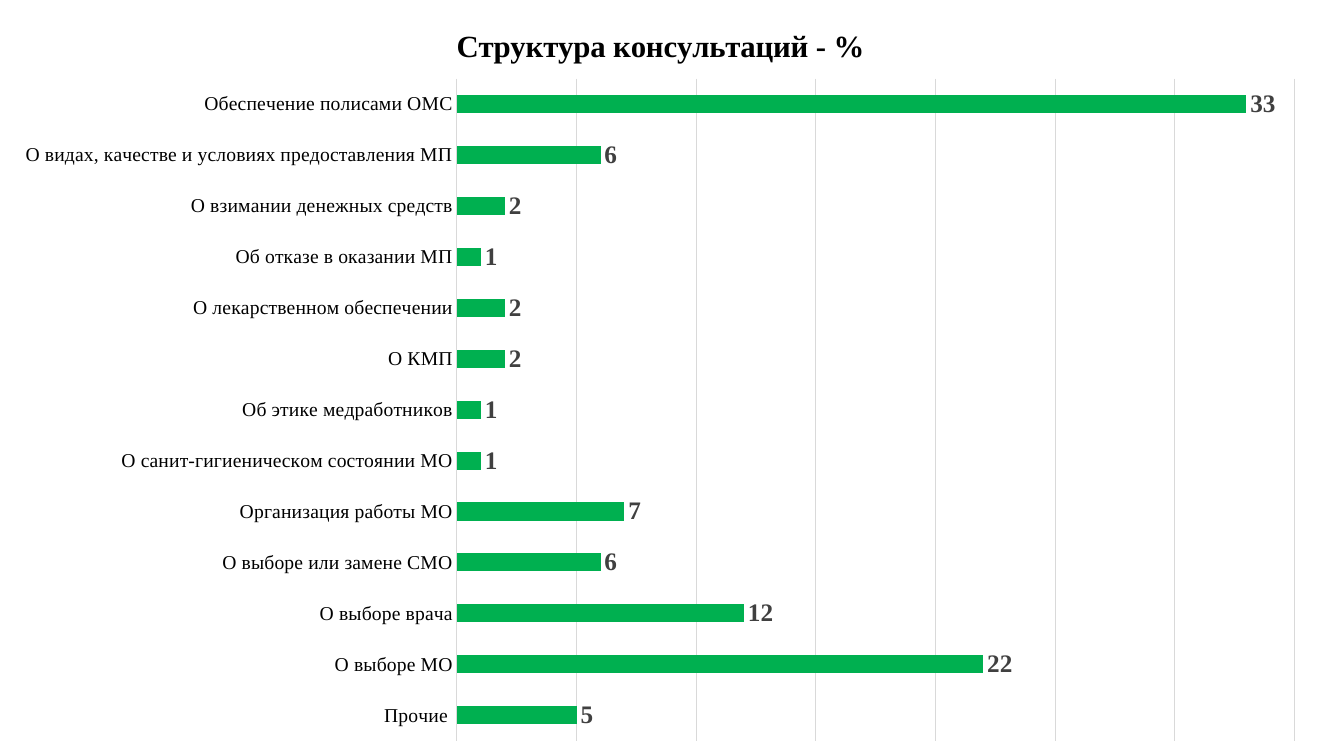
from dataclasses import dataclass

from lxml import etree
from pptx import Presentation
from pptx import util as u
from pptx.chart.data import CategoryChartData
from pptx.dml.color import RGBColor
from pptx.enum import chart as ch
from pptx.oxml import ns


@dataclass(frozen=True)
class Theme:
    font: str = "Times New Roman"
    base: str = "Calibri"
    ink: str = "000000"
    mark: str = "404040"
    bar: str = "00B050"
    grid: str = "D9D9D9"
    head: int = 22
    value: int = 18
    label: int = 14
    small: int = 10


THEME = Theme()
TITLE = "Структура консультаций - %"

# Topics from top to bottom, share in percent
TOPICS = [
    ("Обеспечение полисами ОМС", 33),
    ("О видах, качестве и условиях предоставления МП", 6),
    ("О взимании денежных средств", 2),
    ("Об отказе в оказании МП", 1),
    ("О лекарственном обеспечении", 2),
    ("О КМП", 2),
    ("Об этике медработников", 1),
    ("О санит-гигиеническом состоянии МО", 1),
    ("Организация работы МО", 7),
    ("О выборе или замене СМО", 6),
    ("О выборе врача", 12),
    ("О выборе МО", 22),
    ("Прочие ", 5),
]


def style(font, size, color, bold=False, name=THEME.font):
    font.name = name
    font.size = u.Pt(size)
    font.bold = bold
    font.color.rgb = RGBColor.from_string(color)


def rule(line):
    line.color.rgb = RGBColor.from_string(THEME.grid)
    line.width = u.Pt(0.75)


def place(chart, x, y, w, h):
    """Fix the inner plot area, in fractions of the chart."""
    area = chart._chartSpace.chart.plotArea
    for old in area.findall(ns.qn("c:layout")):
        area.remove(old)
    layout = etree.Element(ns.qn("c:layout"))
    manual = etree.SubElement(layout, ns.qn("c:manualLayout"))
    parts = [("layoutTarget", "inner"), ("xMode", "edge"), ("yMode", "edge"),
             ("x", x), ("y", y), ("w", w), ("h", h)]
    for tag, val in parts:
        etree.SubElement(manual, ns.qn("c:" + tag)).set("val", str(val))
    area.insert(0, layout)


def draw_bars(slide, left, top, width, height):
    data = CategoryChartData(number_format="General")
    names, shares = zip(*reversed(TOPICS))
    data.categories = names
    data.add_series("Series 1", shares)
    chart = slide.shapes.add_chart(
        ch.XL_CHART_TYPE.BAR_CLUSTERED, left, top, width, height, data).chart
    style(chart.font, THEME.small, THEME.ink, name=THEME.base)
    chart.has_legend = False

    # Title
    chart.has_title = True
    chart.chart_title.include_in_layout = False
    run = chart.chart_title.text_frame.paragraphs[0].add_run()
    run.text = TITLE
    style(run.font, THEME.head, THEME.ink, bold=True)

    # Axes
    cat = chart.category_axis
    cat.major_tick_mark = cat.minor_tick_mark = ch.XL_TICK_MARK.NONE
    style(cat.tick_labels.font, THEME.label, THEME.ink)
    rule(cat.format.line)
    val = chart.value_axis
    val.minimum_scale, val.maximum_scale, val.major_unit = 0, 35, 5
    val.has_major_gridlines = True
    rule(val.major_gridlines.format.line)
    val.visible = False

    # Bars and values
    plot = chart.plots[0]
    plot.gap_width = 182
    plot.vary_by_categories = False
    bars = plot.series[0]
    bars.format.fill.solid()
    bars.format.fill.fore_color.rgb = RGBColor.from_string(THEME.bar)
    marks = bars.data_labels
    marks.show_value = True
    marks.position = ch.XL_LABEL_POSITION.OUTSIDE_END
    style(marks.font, THEME.value, THEME.mark, bold=True)

    place(chart, 0.346, 0.104, 0.634, 0.876)


def main():
    deck = Presentation()
    deck.slide_width = u.Inches(13.33)
    deck.slide_height = u.Inches(7.5)
    slide = deck.slides.add_slide(deck.slide_layouts.get_by_name("Blank"))
    draw_bars(slide, 0, 0, u.Inches(13.1), deck.slide_height)
    deck.save("out.pptx")


if __name__ == "__main__":
    main()
